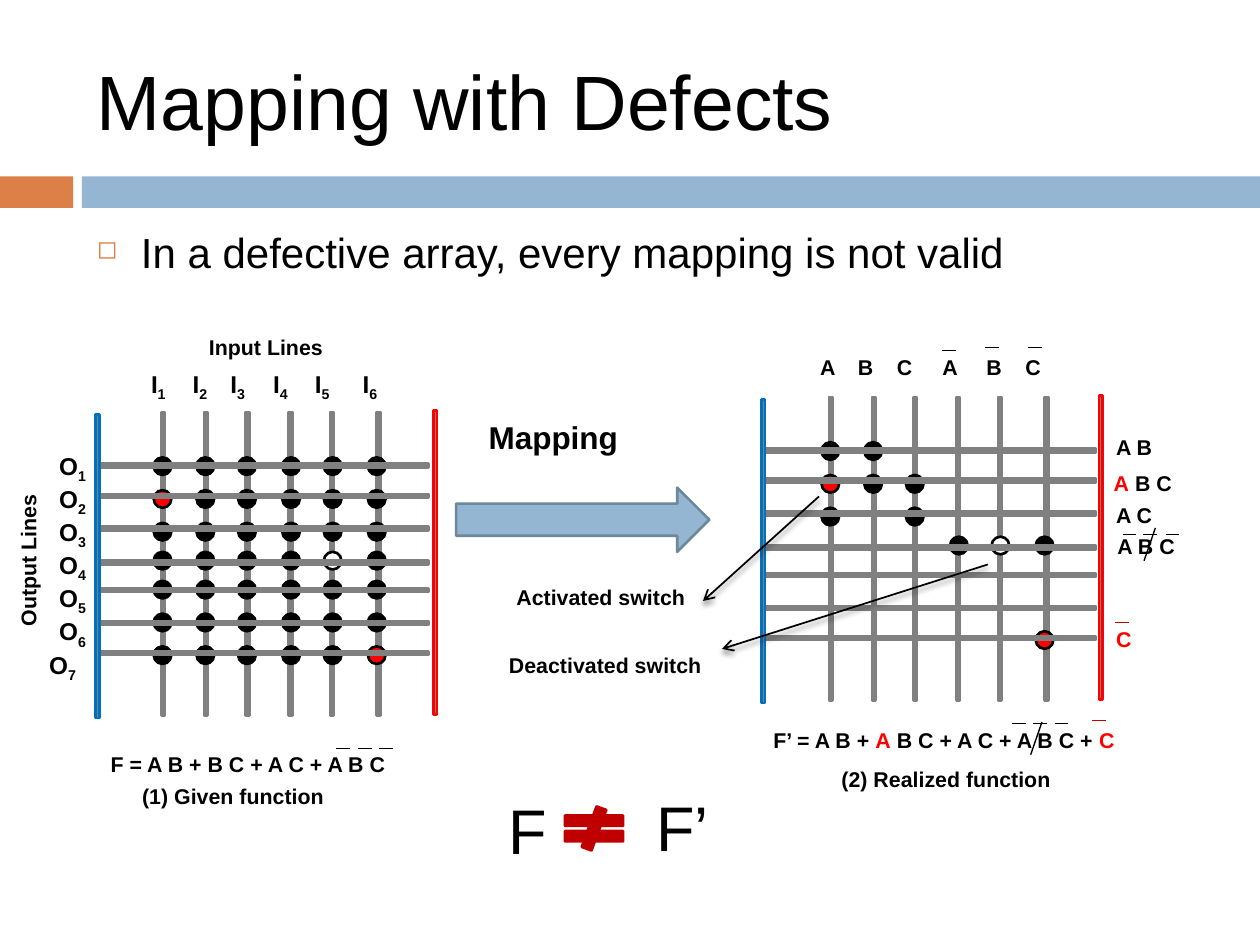
from lxml import etree
from pptx import Presentation
from pptx.dml.color import RGBColor
from pptx.enum import shapes, text
from pptx.oxml import parse_xml
from pptx.oxml.ns import nsdecls, qn
from pptx.util import Inches, Pt

prs = Presentation()
prs.slide_width, prs.slide_height = Inches(10), Inches(7.5)
s = prs.slides.add_slide(prs.slide_layouts[6])
S = shapes.MSO_SHAPE
BLACK, GRAY, RED, DARK_RED = "000000", "808080", "FF0000", "C00000"
BLUE, ORANGE = "94B6D2", "DD8047"


def rgb(value):
    return RGBColor.from_string(value)


def add_text(content, x, y, w, h=0.31, size=12.2, bold=True, color=BLACK, accent=RED,
             align=text.PP_ALIGN.LEFT, anchor=text.MSO_ANCHOR.TOP, tabs=(), rotation=0):
    """Pieces between underscores are subscripts if accent is None, else accent coloured."""
    sp = s.shapes.add_textbox(Inches(x), Inches(y), Inches(w), Inches(h))
    sp.rotation = rotation
    tf = sp.text_frame
    tf.word_wrap = True
    tf.vertical_anchor = anchor
    for i, line in enumerate(content.split("\n")):
        p = tf.paragraphs[0] if i == 0 else tf.add_paragraph()
        p.alignment = align
        for j, piece in enumerate(line.split("_")):
            if not piece:
                continue
            r = p.add_run()
            r.text = piece
            r.font.name, r.font.size, r.font.bold = "Arial", Pt(size), bold
            r.font.color.rgb = rgb(accent if accent and j % 2 else color)
            if accent is None and j % 2:
                r.font._element.set("baseline", "-25000")
        if tabs:
            tab_list = etree.SubElement(p._p.get_or_add_pPr(), qn("a:tabLst"))
            for pos in tabs:
                etree.SubElement(tab_list, qn("a:tab"), pos=str(Inches(pos)), algn="l")
    return sp


blocks = [
    (S.RECTANGLE, 0, 1.4, 0.58, 0.25, ORANGE, None),
    (S.RECTANGLE, 0.65, 1.4, 9.35, 0.25, BLUE, None),
    (S.RIGHT_ARROW, 3.62, 3.87, 2.01, 0.51, BLUE, "6D879B"),
    (S.MATH_NOT_EQUAL, 4.4, 6.4, 0.63, 0.35, DARK_RED, DARK_RED),
]
given = ["######", "R#####", "######", "####O#", "######", "######", "#####R"]
realized = ["##....", "R##...", "#.#...", "...#O#", "......", "......", ".....R"]
dot_fill = {"#": BLACK, "R": RED, "O": "FFFFFF"}
column_x = [1.28, 1.62, 1.95, 2.29, 2.62, 2.99]
dot_x = [1.22, 1.56, 1.89, 2.24, 2.57, 2.92]
row_y = [3.68, 3.92, 4.18, 4.45, 4.67, 4.93, 5.17]
dot_y = [3.63, 3.89, 4.15, 4.38, 4.61, 4.87, 5.13]
for dx, dy, switches in [(0, 0, given), (5.3, -0.12, realized)]:
    for x in column_x:
        blocks.append((S.RECTANGLE, x + dx, 3.27 + dy, 0.03, 2.41, GRAY, GRAY))
    for y, row in zip(dot_y, switches):
        for x, state in zip(dot_x, row):
            if state in dot_fill:
                blocks.append((S.OVAL, x + dx, y + dy, 0.14, 0.14, dot_fill[state], BLACK))
    for y in row_y:
        blocks.append((S.RECTANGLE, 0.78 + dx, y + dy, 2.62, 0.03, GRAY, GRAY))
    for x, y, edge in [(0.76, 3.29, "0070C0"), (3.44, 3.26, RED)]:
        blocks.append((S.RECTANGLE, x + dx - dx / 300, y + dy, 0.03, 2.41, GRAY, edge))

for kind, x, y, w, h, fill, edge in blocks:
    sp = s.shapes.add_shape(kind, Inches(x), Inches(y), Inches(w), Inches(h))
    sp.shadow.inherit = False
    sp.fill.solid()
    sp.fill.fore_color.rgb = rgb(fill)
    if edge:
        sp.line.color.rgb = rgb(edge)
        sp.line.width = Pt(1.5)
    else:
        sp.line.fill.background()

bars = [(7.48, 2.78), (7.82, 2.76), (8.16, 2.76), (8.91, 4.24), (9.07, 4.24), (9.25, 4.24),
        (8.03, 5.74), (8.2, 5.74), (8.37, 5.74), (2.67, 5.94), (2.84, 5.94), (3.01, 5.94)]
lines = [(x, y, x + 0.11, y, BLACK, False) for x, y in bars]
lines += [(x, y, x + 0.11, y, DARK_RED, False) for x, y in [(8.85, 4.94), (8.67, 5.72)]]
lines += [(x, y, x - 0.09, y + 0.26, BLACK, False) for x, y in [(9.17, 4.19), (8.27, 5.73)]]
lines += [(7.84, 4.48, 5.73, 5.15, BLACK, True), (6.5, 3.94, 5.58, 4.77, BLACK, True)]
for x1, y1, x2, y2, color, arrow in lines:
    c = s.shapes.add_connector(shapes.MSO_CONNECTOR.STRAIGHT,
                               Inches(x1), Inches(y1), Inches(x2), Inches(y2))
    c.line.color.rgb = rgb(color)
    c.line.width = Pt(1 if arrow else 0.79)
    effects = etree.SubElement(c._element.spPr, qn("a:effectLst"))
    if arrow:
        etree.SubElement(c.line._get_or_add_ln(), qn("a:tailEnd"), type="arrow")
        effects.append(parse_xml(
            f'<a:outerShdw {nsdecls("a")} blurRad="{Pt(3)}" dist="{Pt(2.4)}" dir="5400000" '
            'rotWithShape="0"><a:srgbClr val="000000"><a:alpha val="45000"/></a:srgbClr>'
            '</a:outerShdw>'))

add_text("Mapping with Defects", 0.67, 0.25, 8.92, 1.08, size=44, bold=False,
         anchor=text.MSO_ANCHOR.MIDDLE)
body = add_text("In a defective array, every mapping is not valid", 0.67, 1.75, 9.25, 0.76,
                size=24, bold=False)
p = body.text_frame.paragraphs[0]
p.space_before = Pt(7)
pPr = p._p.get_or_add_pPr()
pPr.set("marL", str(Inches(0.35)))
pPr.set("indent", str(-Inches(0.35)))
etree.SubElement(etree.SubElement(pPr, qn("a:buClr")), qn("a:srgbClr"), val=ORANGE)
etree.SubElement(pPr, qn("a:buSzPct"), val="60000")
etree.SubElement(pPr, qn("a:buChar"), char="◻")

for content, x, y, w in [
    ("Activated switch", 4, 4.59, 1.66),
    ("Deactivated switch", 3.94, 5.13, 1.98),
    ("(2) Realized function", 6.58, 6.03, 3.19),
    ("A B", 8.76, 3.4, 0.59),
    ("_A_ B C", 8.74, 3.68, 0.79),
    ("A C", 8.76, 3.94, 0.59),
    ("A B C", 8.77, 4.18, 0.76),
    ("_C_", 8.76, 4.92, 0.38),
    ("F’ = A B + _A_ B C + A C + A B C + _C_", 6.04, 5.72, 3.19),
    ("Input Lines", 1.56, 2.6, 1.51),
    ("(1) Given function", 1.03, 6.17, 1.9),
    ("F = A B + B C + A C + A B C", 0.78, 5.91, 2.73),
]:
    add_text(content, x, y, w)

add_text("Output Lines", -0.53, 4.16, 1.51, rotation=270)
add_text("Mapping", 3.78, 3.27, 1.47, 0.4, size=18)
add_text("F’", 5.11, 6.21, 0.72, 0.71, size=36, bold=False)
add_text("F", 3.94, 6.23, 0.5, 0.71, size=36, bold=False)
add_text("\tA\tB\tC\tA\tB\tC", 6.32, 2.76, 2.38, tabs=(0.09, 0.39, 0.7, 1.06, 1.41, 1.72))
add_text("\t".join(f"I_{n}_" for n in range(1, 7)), 1.1, 2.9, 2.81, 0.33, size=13.9,
         accent=None, anchor=text.MSO_ANCHOR.MIDDLE, tabs=(0.33, 0.63, 0.97, 1.3, 1.68))
outputs = add_text("\n".join(f"O_{n}_" for n in range(1, 8)), 0.06, 3.53, 0.72, 1.97,
                   size=13.9, accent=None, align=text.PP_ALIGN.RIGHT)
outputs.text_frame.paragraphs[-1]._p.get_or_add_pPr().set("marR", str(Inches(0.08)))

prs.save("out.pptx")
